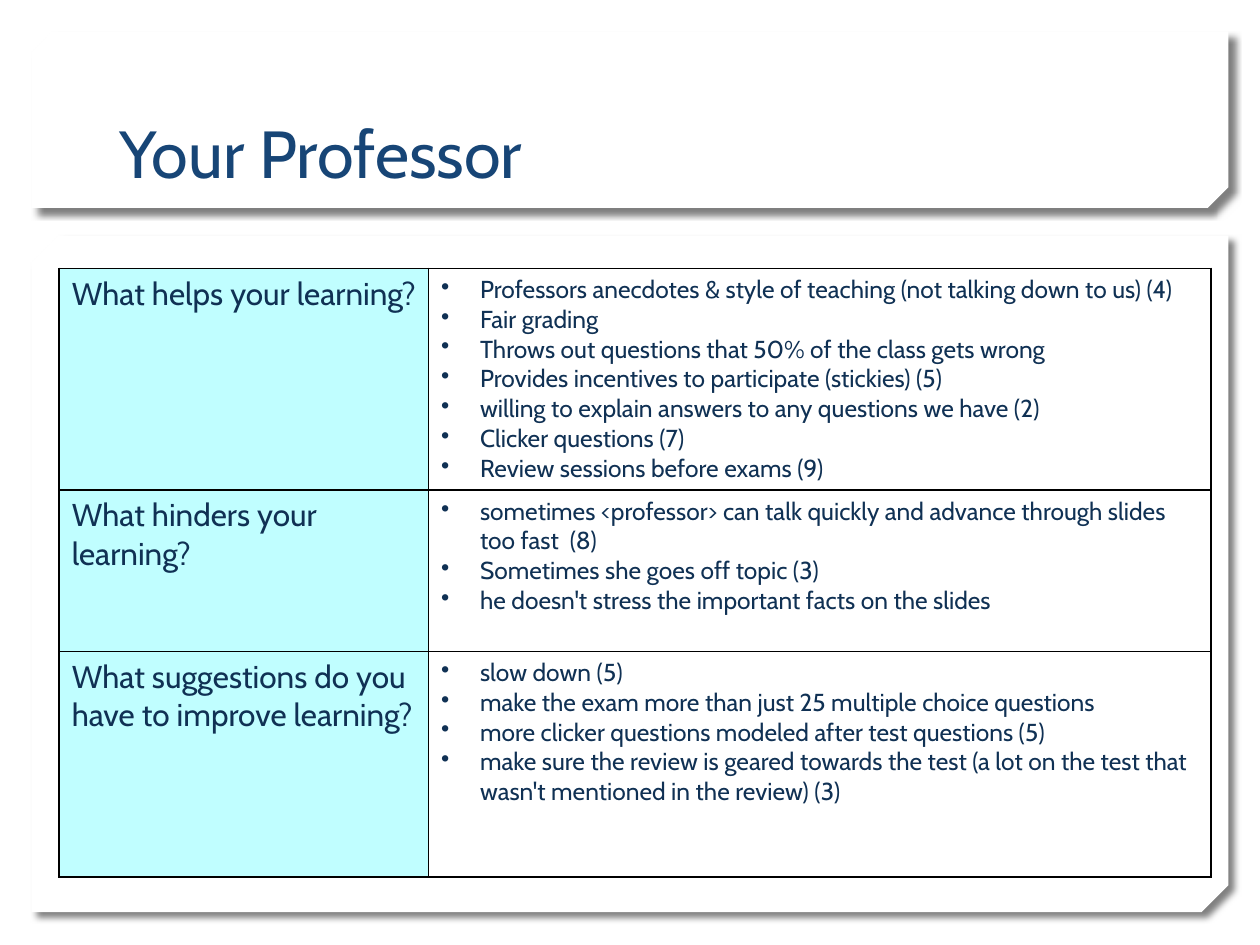
from dataclasses import dataclass

from lxml import etree
from pptx import Presentation
from pptx import util as u
from pptx.dml.color import RGBColor
from pptx.enum import shapes, text
from pptx.oxml import ns


@dataclass(frozen=True)
class Theme:
    """Colours, font and type sizes of the slide."""
    font: str = "Cabin"
    paper: str = "FFFFFF"
    title: str = "174576"
    body: str = "103154"
    question: str = "C0FEFF"
    border: str = "000000"
    title_size: int = 38
    question_size: int = 18
    answer_size: int = 14


THEME = Theme()

FEEDBACK = [
    ("What helps your learning?", 1.76, [
        "Professors anecdotes & style of teaching (not talking down to us) (4)",
        "Fair grading",
        "Throws out questions that 50% of the class gets wrong",
        "Provides incentives to participate (stickies) (5)",
        "willing to explain answers to any questions we have (2)",
        "Clicker questions (7)",
        "Review sessions before exams (9)",
    ]),
    ("What hinders your learning?", 1.28, [
        "sometimes <professor> can talk quickly and advance through slides too fast  (8)",
        "Sometimes she goes off topic (3)",
        "he doesn't stress the important facts on the slides",
    ]),
    ("What suggestions do you have to improve learning?", 1.79, [
        "slow down (5)",
        "make the exam more than just 25 multiple choice questions",
        "more clicker questions modeled after test questions (5)",
        "make sure the review is geared towards the test "
        "(a lot on the test that wasn't mentioned in the review) (3)",
    ]),
]


def add_xml(parent, tag, **attributes):
    """Append a DrawingML child and return it."""
    child = etree.SubElement(parent, ns.qn(tag))
    for name, value in attributes.items():
        child.set(name, str(value))
    return child


def style(paragraph, size, color):
    """Set the font of a whole paragraph."""
    paragraph.font.name = THEME.font
    paragraph.font.size = u.Pt(size)
    paragraph.font.color.rgb = RGBColor.from_string(color)


def add_panel(slide, top, height, snip):
    """Add a white panel with a snipped lower right corner and a soft shadow."""
    panel = slide.shapes.add_shape(
        shapes.MSO_SHAPE.SNIP_2_DIAG_RECTANGLE,
        u.Inches(0.25), u.Inches(top), u.Inches(9.5), u.Inches(height))
    panel.adjustments[0] = 0
    panel.adjustments[1] = snip
    panel.fill.solid()
    panel.fill.fore_color.rgb = RGBColor.from_string(THEME.paper)
    panel.line.fill.background()
    panel.shadow.inherit = False
    properties = panel.element.spPr
    properties.find(ns.qn("a:xfrm")).set("flipV", "1")
    shadow = add_xml(properties.find(ns.qn("a:effectLst")), "a:outerShdw",
                     blurRad=u.Pt(4), dist=u.Pt(5), dir=45 * 60000,
                     algn="tl", rotWithShape=0)
    color = add_xml(shadow, "a:srgbClr", val=THEME.border)
    add_xml(color, "a:alpha", val=50000)


def add_title(slide, wording):
    """Add the slide heading, resting on the bottom of its box."""
    heading = slide.shapes.add_textbox(
        u.Inches(0.85), u.Inches(0.32), u.Inches(8.29), u.Inches(1.25))
    frame = heading.text_frame
    frame.word_wrap = True
    frame.vertical_anchor = text.MSO_ANCHOR.BOTTOM
    frame.text = wording
    style(frame.paragraphs[0], THEME.title_size, THEME.title)


def add_borders(cell):
    """Draw a thin line on all four sides of a cell."""
    properties = cell._tc.get_or_add_tcPr()
    for side in ("a:lnL", "a:lnR", "a:lnT", "a:lnB"):
        line = add_xml(properties, side, w=u.Pt(1))
        add_xml(add_xml(line, "a:solidFill"), "a:srgbClr", val=THEME.border)


def fill_question(cell, question):
    """Write a question on its tinted cell."""
    add_borders(cell)
    cell.fill.solid()
    cell.fill.fore_color.rgb = RGBColor.from_string(THEME.question)
    cell.text = question
    style(cell.text_frame.paragraphs[0], THEME.question_size, THEME.body)


def fill_answers(cell, answers):
    """Write the answers as a bulleted list on a clear cell."""
    add_borders(cell)
    cell.fill.background()
    cell.text = "\n".join(answers)
    for paragraph in cell.text_frame.paragraphs:
        properties = paragraph._p.get_or_add_pPr()
        properties.set("marL", str(u.Inches(0.31)))
        properties.set("indent", str(-u.Inches(0.31)))
        add_xml(properties, "a:buChar", char="•")
        style(paragraph, THEME.answer_size, THEME.body)


def add_feedback(slide):
    """Add the table of questions and answers."""
    total = sum(height for _, height, _ in FEEDBACK)
    table = slide.shapes.add_table(
        len(FEEDBACK), 2, u.Inches(0.47), u.Inches(2.13),
        u.Inches(9.14), u.Inches(total)).table
    table.first_row = table.horz_banding = False
    for column, width in zip(table.columns, (2.93, 6.21)):
        column.width = u.Inches(width)
    for row, (question, height, answers) in zip(table.rows, FEEDBACK):
        row.height = u.Inches(height)
        fill_question(row.cells[0], question)
        fill_answers(row.cells[1], answers)


def main():
    """Build and save the slide."""
    deck = Presentation()
    deck.slide_width, deck.slide_height = u.Inches(10), u.Inches(7.5)
    slide = deck.slides.add_slide(deck.slide_layouts[6])
    add_panel(slide, 1.87, 5.37, 0.04)
    add_panel(slide, 0.25, 1.4, 0.117)
    add_title(slide, "Your Professor")
    add_feedback(slide)
    deck.save("out.pptx")


if __name__ == "__main__":
    main()
